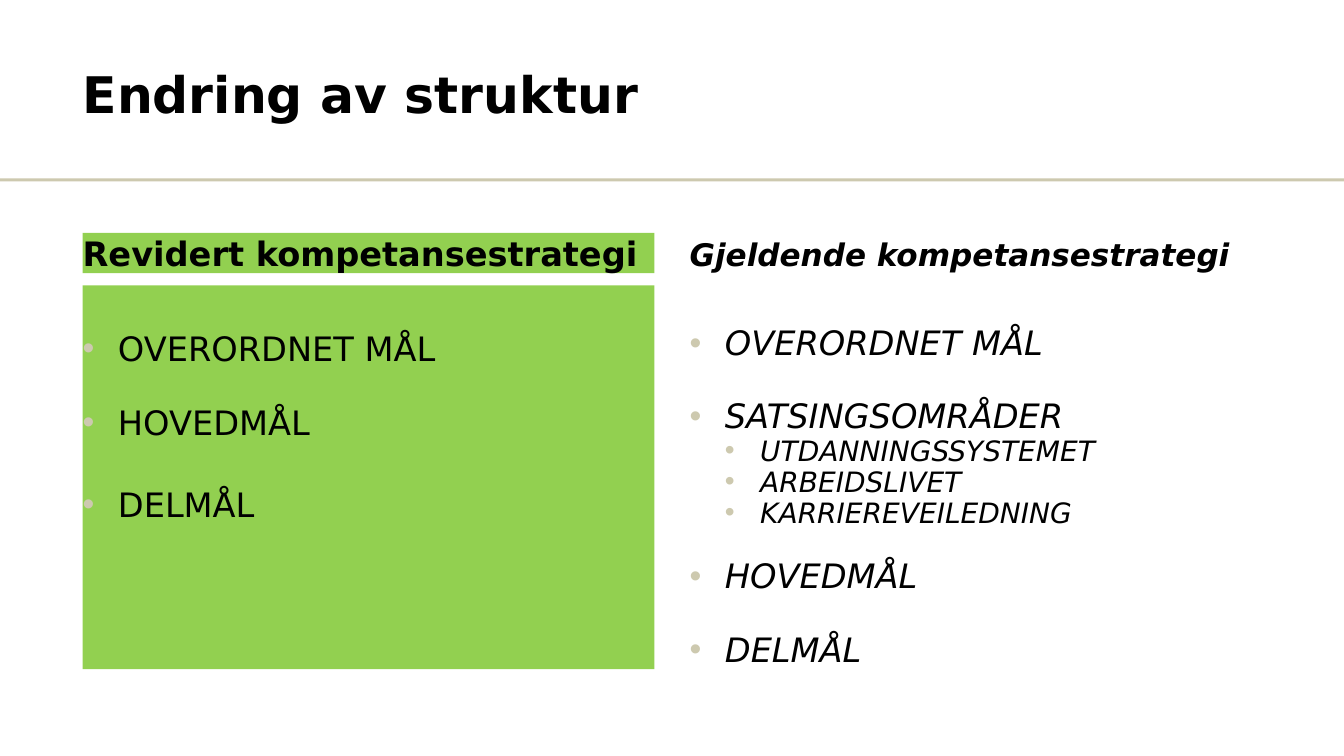
import lxml.etree
import pptx
import pptx.dml.color
import pptx.enum.shapes
import pptx.enum.text
import pptx.oxml.ns
import pptx.util

BLACK = pptx.dml.color.RGBColor(0x00, 0x00, 0x00)
GREEN = pptx.dml.color.RGBColor(0x92, 0xD0, 0x50)
SAND = pptx.dml.color.RGBColor(0xCD, 0xC9, 0xAF)

WIDTH, HEIGHT = 13.33, 7.5
MARGIN, COLUMN, GUTTER = 0.82, 5.67, 0.35
HEADING_ROW = (2.31, 0.4)
LIST_ROW = (2.83, 3.81)
INDENT = 0.35
LEVEL_SIZES = (24, 20)

ANCHOR = pptx.enum.text.MSO_ANCHOR

# Each item: text, level, space before in points
REVISED_ITEMS = [
    ("OVERORDNET MÅL", 0, 0),
    ("HOVEDMÅL", 0, 24),
    ("DELMÅL", 0, 30),
]
CURRENT_ITEMS = [
    ("OVERORDNET MÅL", 0, 0),
    ("SATSINGSOMRÅDER", 0, 26.5),
    ("UTDANNINGSSYSTEMET", 1, 0.5),
    ("ARBEIDSLIVET", 1, 0.5),
    ("KARRIEREVEILEDNING", 1, 0.5),
    ("HOVEDMÅL", 0, 22),
    ("DELMÅL", 0, 26.5),
]


class SlideBuilder:
    font_name = "DejaVu Sans"

    def __init__(self, slide):
        self.slide = slide

    def column_left(self, column):
        return MARGIN + column * (COLUMN + GUTTER)

    def rule(self, top, thickness):
        shape = self.slide.shapes.add_shape(
            pptx.enum.shapes.MSO_SHAPE.RECTANGLE, 0, pptx.util.Inches(top),
            pptx.util.Inches(WIDTH), pptx.util.Inches(thickness))
        shape.shadow.inherit = False
        shape.fill.solid()
        shape.fill.fore_color.rgb = SAND
        shape.line.fill.background()

    def text_frame(self, left, row, width, anchor, fill=None, inset_top=0):
        top, height = row
        box = self.slide.shapes.add_textbox(
            *map(pptx.util.Inches, (left, top, width, height)))
        if fill is not None:
            box.fill.solid()
            box.fill.fore_color.rgb = fill
        frame = box.text_frame
        frame.word_wrap = True
        frame.vertical_anchor = anchor
        frame.margin_left = frame.margin_right = frame.margin_bottom = 0
        frame.margin_top = pptx.util.Inches(inset_top)
        return frame

    def style(self, paragraph, size, bold=False, italic=False):
        font = paragraph.font
        font.name = self.font_name
        font.size = pptx.util.Pt(size)
        font.bold = bold
        font.italic = italic
        font.color.rgb = BLACK

    def bullet(self, paragraph, level):
        properties = paragraph._p.get_or_add_pPr()
        properties.set("marL", str(pptx.util.Inches(INDENT * (level + 1))))
        properties.set("indent", str(-pptx.util.Inches(INDENT)))
        qualified = pptx.oxml.ns.qn
        color = lxml.etree.SubElement(properties, qualified("a:buClr"))
        lxml.etree.SubElement(color, qualified("a:srgbClr"), val=str(SAND))
        lxml.etree.SubElement(properties, qualified("a:buFont"), typeface="Arial")
        lxml.etree.SubElement(properties, qualified("a:buChar"), char="•")

    def title(self, text):
        frame = self.text_frame(MARGIN, (0.36, 1.21), 10.5, ANCHOR.MIDDLE)
        paragraph = frame.paragraphs[0]
        paragraph.text = text
        paragraph.line_spacing = 0.9
        self.style(paragraph, 36, bold=True)

    def heading(self, column, text, size, fill=None, italic=False):
        frame = self.text_frame(
            self.column_left(column), HEADING_ROW, COLUMN, ANCHOR.BOTTOM, fill)
        paragraph = frame.paragraphs[0]
        paragraph.text = text
        self.style(paragraph, size, bold=True, italic=italic)

    def bullet_list(self, column, items, inset_top, line_spacing=1.0,
                    fill=None, italic=False):
        frame = self.text_frame(
            self.column_left(column), LIST_ROW, COLUMN, ANCHOR.TOP, fill, inset_top)
        for index, (text, level, space_before) in enumerate(items):
            paragraph = frame.add_paragraph() if index else frame.paragraphs[0]
            paragraph.text = text
            paragraph.level = level
            self.bullet(paragraph, level)
            paragraph.line_spacing = line_spacing
            if space_before:
                paragraph.space_before = pptx.util.Pt(space_before)
            self.style(paragraph, LEVEL_SIZES[level], italic=italic)


def main():
    presentation = pptx.Presentation()
    presentation.slide_width = pptx.util.Inches(WIDTH)
    presentation.slide_height = pptx.util.Inches(HEIGHT)
    builder = SlideBuilder(
        presentation.slides.add_slide(presentation.slide_layouts[6]))

    builder.rule(1.77, 0.03)
    builder.title("Endring av struktur")
    builder.heading(0, "Revidert kompetansestrategi", 24, fill=GREEN)
    builder.bullet_list(0, REVISED_ITEMS, inset_top=0.42, fill=GREEN)
    builder.heading(1, "Gjeldende kompetansestrategi", 22.2, italic=True)
    builder.bullet_list(1, CURRENT_ITEMS, inset_top=0.41, line_spacing=0.9,
                        italic=True)

    presentation.save("out.pptx")


if __name__ == "__main__":
    main()
